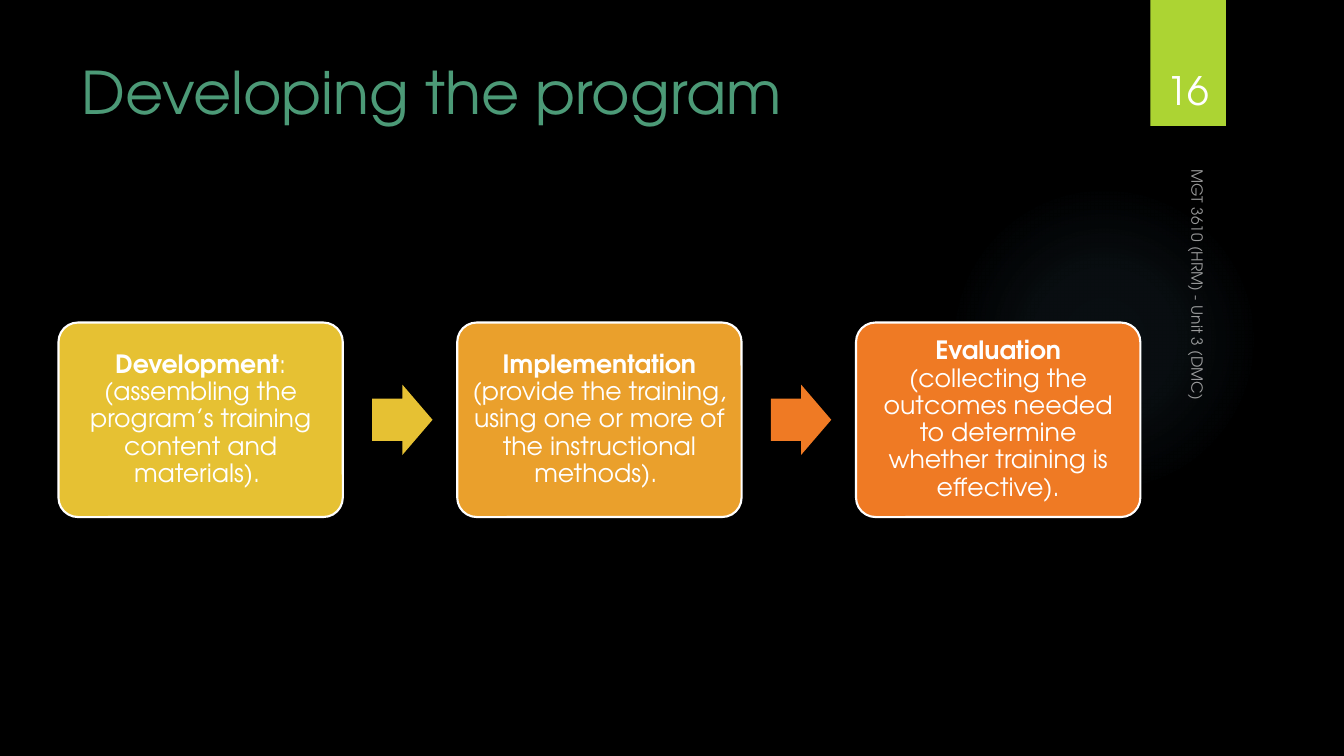
from lxml import etree
from pptx import Presentation
from pptx.dml.color import RGBColor
from pptx.enum.shapes import MSO_SHAPE
from pptx.enum.text import MSO_ANCHOR, PP_ALIGN
from pptx.oxml import parse_xml
from pptx.oxml.ns import nsdecls, qn
from pptx.util import Inches, Pt

RECT, ROUND = MSO_SHAPE.RECTANGLE, MSO_SHAPE.ROUNDED_RECTANGLE
OVAL, ARROW = MSO_SHAPE.OVAL, MSO_SHAPE.RIGHT_ARROW
TOP, MIDDLE, BOTTOM = MSO_ANCHOR.TOP, MSO_ANCHOR.MIDDLE, MSO_ANCHOR.BOTTOM
LEFT, CENTER = PP_ALIGN.LEFT, PP_ALIGN.CENTER

# Content
TITLE = "Developing the program"
FOOTER = "MGT 3610 (HRM) - Unit 3 (DMC)"
PAGE = "16"
STEPS = [
    ("Development", ": (assembling the program’s training content and materials). ", "E6C133"),
    ("Implementation", " (provide the training, using one or more of the "
     "instructional methods). ", "EAA02C"),
    ("Evaluation ", "(collecting the outcomes needed to determine whether "
     "training is effective).", "EF7A24"),
]
ARROW_COLORS = ["E6C133", "EF7A24"]

THEME = {
    "font": "TeX Gyre Adventor",
    "bg": "000000", "title": "4C9A77", "text": "FFFFFF",
    "badge": "ACD433", "glow": "7AC4F0",
    "title_pt": 42, "page_pt": 28, "step_pt": 18, "footer_pt": 11,
}
GLOW_STOPS = [(0, 7), (36, 6), (69, 0)]  # position %, opacity %

# Layout, in inches
CARD_X, CARD_Y, CARD_W, CARD_H, PITCH = 0.58, 3.2, 2.82, 1.93, 3.955
ARROW_W, ARROW_H, ARROW_GAP = 0.6, 0.7, 0.29


def rgb(name):
    return RGBColor.from_string(name)


def add_shape(kind, box, fill, adjust=()):
    s = slide.shapes.add_shape(kind, *map(Inches, box))
    s.shadow.inherit = False
    s.fill.solid()
    s.fill.fore_color.rgb = rgb(fill)
    s.line.fill.background()
    for i, value in enumerate(adjust):
        s.adjustments[i] = value
    return s


def write(s, runs, size, color, align, anchor):
    """Fill a shape with one paragraph of (text, bold) runs."""
    tf = s.text_frame
    tf.word_wrap = True
    tf.vertical_anchor = anchor
    p = tf.paragraphs[0]
    p.alignment = align
    for text, bold in runs:
        r = p.add_run()
        r.text = text
        r.font.name = THEME["font"]
        r.font.size = Pt(size)
        r.font.bold = bold
        r.font.color.rgb = rgb(color)
    return p


def add_text(box, text, size, color, align, anchor):
    s = slide.shapes.add_textbox(*map(Inches, box))
    write(s, [(text, False)], size, color, align, anchor)
    return s


prs = Presentation()
prs.slide_width, prs.slide_height = Inches(13.33), Inches(7.5)
slide = prs.slides.add_slide(prs.slide_layouts[6])
slide.background.fill.solid()
slide.background.fill.fore_color.rgb = rgb(THEME["bg"])

# Soft glow
glow = add_shape(OVAL, (9.41, 1.83, 3.08, 3.08), THEME["glow"])
stops = "".join(
    f'<a:gs pos="{pos * 1000}"><a:srgbClr val="{THEME["glow"]}">'
    f'<a:alpha val="{alpha * 1000}"/></a:srgbClr></a:gs>'
    for pos, alpha in GLOW_STOPS)
solid = glow.element.spPr.find(qn("a:solidFill"))
solid.getparent().replace(solid, parse_xml(
    f'<a:gradFill {nsdecls("a")}><a:gsLst>{stops}</a:gsLst><a:path path="circle">'
    '<a:fillToRect l="50000" t="50000" r="50000" b="50000"/></a:path></a:gradFill>'))

# Page badge and title
add_shape(RECT, (11.41, 0, 0.75, 1.25), THEME["badge"])
add_text((0.71, 0.5, 10.29, 1.53), TITLE, THEME["title_pt"], THEME["title"], LEFT, TOP)

# Step cards
for i, (head, body, color) in enumerate(STEPS):
    card = add_shape(ROUND, (CARD_X + i * PITCH, CARD_Y, CARD_W, CARD_H), color, [0.1])
    card.line.color.rgb = rgb(THEME["text"])
    card.line.width = Pt(1.5)
    tf = card.text_frame
    tf.margin_left = tf.margin_right = tf.margin_top = tf.margin_bottom = Inches(0.07)
    p = write(card, [(head, True), (body, False)], THEME["step_pt"],
              THEME["text"], CENTER, MIDDLE)
    p.line_spacing = 0.9

# Arrows between cards
for i, color in enumerate(ARROW_COLORS):
    x = CARD_X + i * PITCH + CARD_W + ARROW_GAP
    y = CARD_Y + (CARD_H - ARROW_H) / 2
    add_shape(ARROW, (x, y, ARROW_W, ARROW_H), color, [0.6, 0.5])

# Footer along the right edge, and page number
footer = add_text((9.79, 3.53, 4.22, 0.33), FOOTER, THEME["footer_pt"],
                  THEME["text"], LEFT, BOTTOM)
footer.rotation = 90
for clr in footer.element.iter(qn("a:srgbClr")):
    etree.SubElement(clr, qn("a:alpha"), val="60000")
add_text((11.32, 0.39, 0.92, 0.78), PAGE, THEME["page_pt"], THEME["text"], CENTER, BOTTOM)

prs.save("out.pptx")
